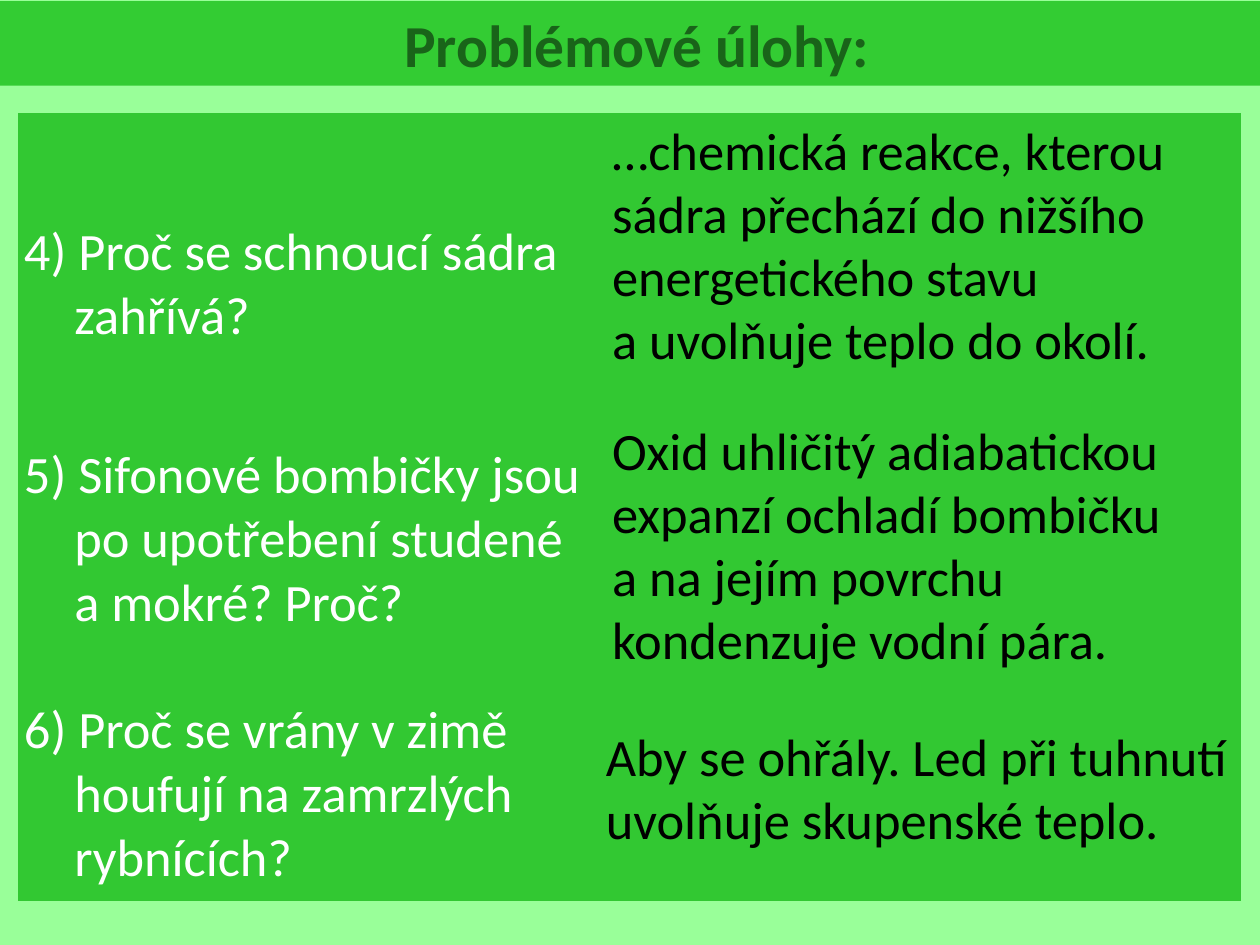
from dataclasses import dataclass

from lxml import etree
from pptx import Presentation
from pptx.dml.color import RGBColor
from pptx.enum import text as t
from pptx.oxml import ns
from pptx.util import Inches, Pt


@dataclass(frozen=True)
class Theme:
    font: str = "Calibri"
    title_size: int = 34
    body_size: int = 30
    background: str = "99FF99"
    title_fill: str = "33CC33"
    title_color: str = "196419"
    cell_fill: str = "32C832"
    question_color: str = "FFFFFF"
    answer_color: str = "000000"


@dataclass(frozen=True)
class Problem:
    question: str
    answer: str
    row_height: float
    answer_box: tuple[float, float, float, float]
    top_margin: float = 0


THEME = Theme()
COLUMN_WIDTHS = (4.53, 5.18)
PROBLEMS = (
    Problem(
        "4) Proč se schnoucí sádra zahřívá?",
        "…chemická reakce, kterou sádra přechází do nižšího energetického stavu \va uvolňuje teplo do okolí.",
        2.2, (4.66, 0.89, 4.96, 2.12), top_margin=0.51,
    ),
    Problem(
        "5) Sifonové bombičky jsou po upotřebení studené a mokré? Proč?",
        "Oxid uhličitý adiabatickou expanzí ochladí bombičku \va na jejím povrchu kondenzuje vodní pára.",
        2.36, (4.66, 3.27, 5.19, 2.12),
    ),
    Problem(
        "6) Proč se vrány v zimě houfují na zamrzlých rybnících?",
        "Aby se ohřály. Led při tuhnutí uvolňuje skupenské teplo.",
        1.69, (4.61, 5.7, 5.24, 1.11),
    ),
)


def set_fill(target, color: str) -> None:
    target.fill.solid()
    target.fill.fore_color.rgb = RGBColor.from_string(color)


def write_text(frame, content: str, *, color: str, size: int = THEME.body_size,
               bold: bool = False, align=t.PP_ALIGN.LEFT,
               margin: float = 0, indent: float = 0) -> None:
    frame.word_wrap = True
    paragraph = frame.paragraphs[0]
    paragraph.text = content
    paragraph.alignment = align
    properties = paragraph._p.get_or_add_pPr()
    properties.set("marL", str(Inches(margin)))
    properties.set("indent", str(Inches(indent)))
    for run in paragraph.runs:
        run.font.name = THEME.font
        run.font.size = Pt(size)
        run.font.bold = bold
        run.font.color.rgb = RGBColor.from_string(color)


def place(shape, left: float, top: float, width: float, height: float) -> None:
    shape.left, shape.top = Inches(left), Inches(top)
    shape.width, shape.height = Inches(width), Inches(height)


def hide_borders(cell) -> None:
    properties = cell._tc.get_or_add_tcPr()
    for position, edge in enumerate(("lnL", "lnR", "lnT", "lnB")):
        line = etree.Element(ns.qn(f"a:{edge}"))
        etree.SubElement(line, ns.qn("a:noFill"))
        properties.insert(position, line)


def add_title(slide, content: str) -> None:
    title = slide.shapes.title
    place(title, 0, 0.01, 10, 0.67)
    set_fill(title, THEME.title_fill)
    title.text_frame.vertical_anchor = t.MSO_ANCHOR.MIDDLE
    title.text_frame.auto_size = t.MSO_AUTO_SIZE.NONE
    write_text(title.text_frame, content, color=THEME.title_color,
               size=THEME.title_size, bold=True, align=t.PP_ALIGN.CENTER, margin=0.11)


def add_questions(slide, problems: tuple[Problem, ...]) -> None:
    height = sum(problem.row_height for problem in problems)
    table = slide.shapes.add_table(
        len(problems), len(COLUMN_WIDTHS), Inches(0.14), Inches(0.9),
        Inches(sum(COLUMN_WIDTHS)), Inches(height)).table
    table.first_row = table.horz_banding = False
    for column, width in zip(table.columns, COLUMN_WIDTHS):
        column.width = Inches(width)
    for row, problem in zip(table.rows, problems):
        row.height = Inches(problem.row_height)
        for cell in row.cells:
            set_fill(cell, THEME.cell_fill)
            hide_borders(cell)
        cell = row.cells[0]
        cell.vertical_anchor = t.MSO_ANCHOR.MIDDLE
        cell.margin_left = cell.margin_right = Inches(0.05)
        cell.margin_top, cell.margin_bottom = Inches(problem.top_margin), 0
        write_text(cell.text_frame, problem.question, color=THEME.question_color,
                   margin=0.4, indent=-0.4)


def add_answer(slide, problem: Problem) -> None:
    box = slide.shapes.add_textbox(*map(Inches, problem.answer_box))
    write_text(box.text_frame, problem.answer, color=THEME.answer_color, margin=0.1)


def main() -> None:
    presentation = Presentation()
    presentation.slide_width, presentation.slide_height = Inches(10), Inches(7.5)
    slide = presentation.slides.add_slide(presentation.slide_layouts.get_by_name("Title Only"))
    set_fill(slide.background, THEME.background)
    add_title(slide, "Problémové úlohy:")
    add_questions(slide, PROBLEMS)
    for problem in PROBLEMS:
        add_answer(slide, problem)
    presentation.save("out.pptx")


if __name__ == "__main__":
    main()
